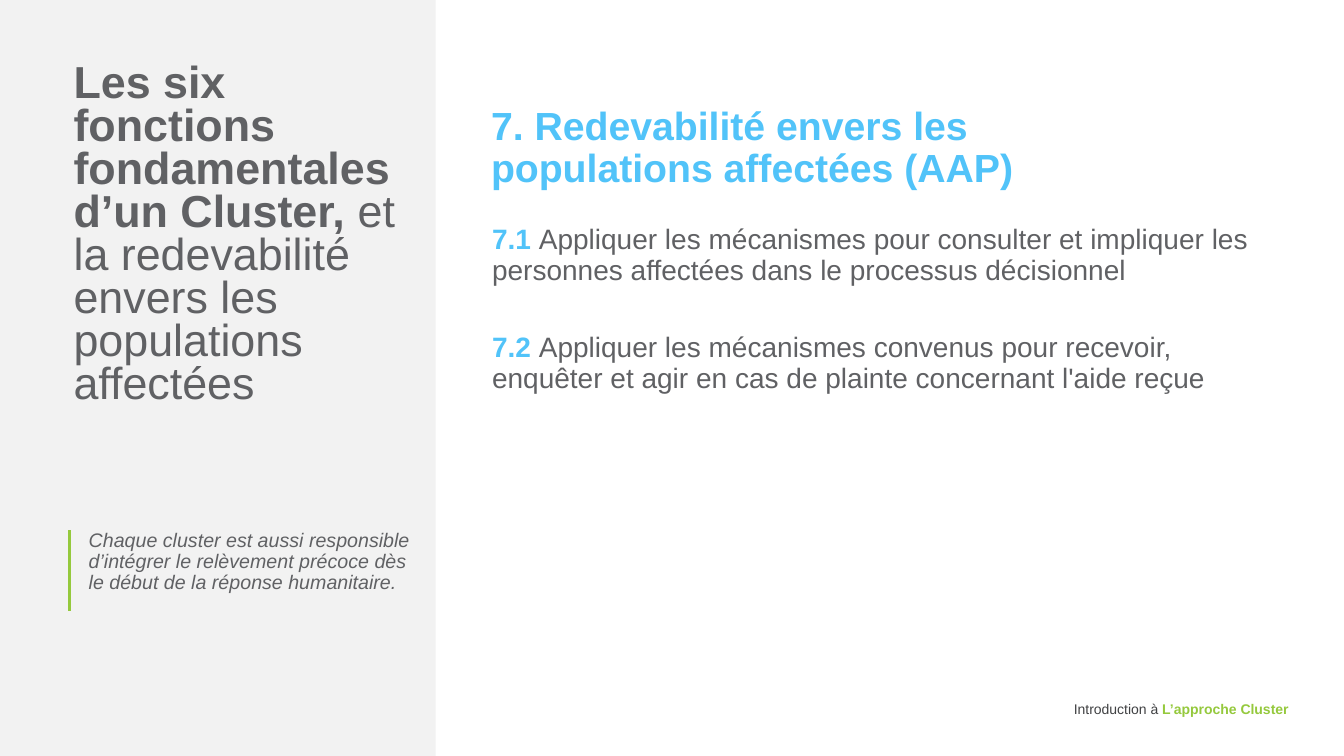
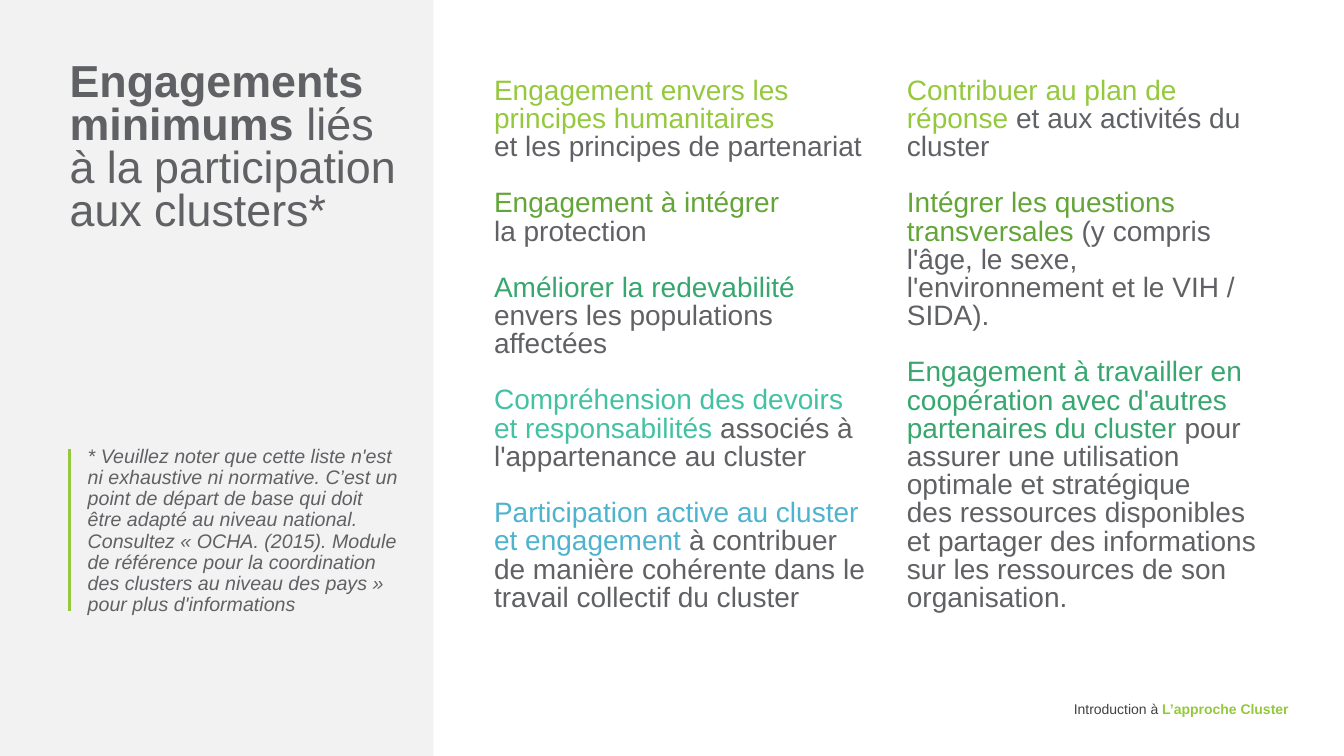
"""Build two slides on cluster functions and participation commitments."""
import pptx
import pptx.dml.color
import pptx.enum.shapes
import pptx.enum.text
import pptx.util
from lxml import etree

WIDTH, HEIGHT = 13.33, 7.5
FONT = "Arial"
PANEL, GREY, INK = "F2F2F2", "606164", "404143"
LIME, GREEN, JADE, TEAL, BLUE, SKY = "95C93D", "63A537", "37A76F", "44C1A3", "4EB3CF", "51C3F9"
BOLD, ITALIC = "bold", "italic"
RULE_X, RULE_BASE = 0.69, 6.06
COLUMNS_LEFT, COLUMNS_TOP, COLUMNS_WIDTH, COLUMNS_HEIGHT = 4.9, 0.72, 7.9, 5.65
COLUMN_GAP, RIGHT_INSET = 0.39, 0.1

# Text is a list of groups; a group is a list of paragraphs; a paragraph is a list of runs.
FOOTER = [[[("Introduction à ", INK), ("L’approche Cluster", LIME, BOLD)]]]

FUNCTIONS = {
    "panel": 4.32,
    "title_at": (0.73, 0.59, 3.37, 3.65),
    "title": [[[("Les six fonctions fondamentales d’un Cluster,", GREY, BOLD),
                (" et la redevabilité envers les populations affectées", GREY)]]],
    "note_at": (0.88, 5.21, 3.37, 1.04),
    "note": "Chaque cluster est aussi responsible d’intégrer le relèvement précoce "
            "dès le début de la réponse humanitaire.",
    "note_anchor": "TOP",
    "rule_top": 5.26,
}
HEADING = [[[("7. Redevabilité envers les", SKY, BOLD)],
            [("populations affectées (AAP)", SKY, BOLD)]]]
MECHANISMS = [
    [[("7.1 ", SKY, BOLD),
      ("Appliquer les mécanismes pour consulter et impliquer les personnes affectées "
       "dans le processus décisionnel", GREY)]],
    [[("7.2 ", SKY, BOLD),
      ("Appliquer les mécanismes convenus pour recevoir, enquêter et agir en cas de plainte "
       "concernant l'aide reçue", GREY)]],
]

COMMITMENTS = {
    "panel": 4.3,
    "title_at": (0.69, 0.58, 3.61, 2.5),
    "title": [[[("Engagements minimums ", GREY, BOLD), ("liés", GREY)],
               [("à la participation aux clusters*", GREY)]]],
    "note_at": (0.87, 4.45, 3.18, 1.71),
    "note": "* Veuillez noter que cette liste n'est ni exhaustive ni normative. C’est un point "
            "de départ de base qui doit être adapté au niveau national. Consultez « OCHA. (2015). "
            "Module de référence pour la coordination des clusters au niveau des pays » "
            "pour plus d'informations",
    "note_anchor": "BOTTOM",
    "rule_top": 4.45,
}
COMMITMENT_COLUMNS = [
    [
        [[("Engagement envers les principes humanitaires", LIME)],
         [("et les principes de partenariat", GREY)]],
        [[("Engagement à intégrer", GREEN)], [("la protection", GREY)]],
        [[("Améliorer la redevabilité ", JADE), ("envers les populations affectées", GREY)]],
        [[("Compréhension des devoirs et responsabilités", TEAL),
          (" associés à l'appartenance au cluster", GREY)]],
        [[("Participation active au cluster et engagement", BLUE),
          (" à contribuer de manière cohérente dans le travail collectif du cluster", GREY)]],
    ],
    [
        [[("Contribuer au plan de réponse ", LIME), ("et aux activités du cluster", GREY)]],
        [[("Intégrer les questions transversales ", GREEN),
          ("(y compris l'âge, le sexe, l'environnement et le VIH / SIDA).", GREY)]],
        [[("Engagement à travailler en coopération avec d'autres partenaires du cluster ", JADE),
          ("pour assurer une utilisation optimale et stratégique", GREY)],
         [("des ressources disponibles", GREY)],
         [("et partager des informations", GREY)],
         [("sur les ressources de son organisation.", GREY)]],
    ],
]


def color(value):
    return pptx.dml.color.RGBColor.from_string(value)


def inches(*lengths):
    return [pptx.util.Inches(length) for length in lengths]


def add_text(slide, at, groups, size, spacing, gap=0, anchor="TOP", align="LEFT",
             insets=(0, 0.05, RIGHT_INSET, 0.05)):
    frame = slide.shapes.add_textbox(*inches(*at)).text_frame
    frame.word_wrap = True
    frame.vertical_anchor = pptx.enum.text.MSO_ANCHOR[anchor]
    (frame.margin_left, frame.margin_top,
     frame.margin_right, frame.margin_bottom) = inches(*insets)
    paragraph = None
    for group in groups:
        for position, runs in enumerate(group):
            first = paragraph is None
            paragraph = frame.paragraphs[0] if first else frame.add_paragraph()
            paragraph.alignment = pptx.enum.text.PP_ALIGN[align]
            paragraph.line_spacing = spacing
            if gap and position == 0 and not first:
                paragraph.space_before = pptx.util.Pt(gap)
            for words, ink, *styles in runs:
                run = paragraph.add_run()
                run.text = words
                run.font.name = FONT
                run.font.size = pptx.util.Pt(size)
                run.font.color.rgb = color(ink)
                run.font.bold = BOLD in styles
                run.font.italic = ITALIC in styles


def add_side_panel(slide, side):
    panel = slide.shapes.add_shape(pptx.enum.shapes.MSO_SHAPE.RECTANGLE,
                                   *inches(0, 0, side["panel"], HEIGHT))
    panel.shadow.inherit = False
    panel.fill.solid()
    panel.fill.fore_color.rgb = color(PANEL)
    panel.line.fill.background()
    add_text(slide, side["title_at"], side["title"], 32, 0.8)
    add_text(slide, side["note_at"], [[[(side["note"], GREY, ITALIC)]]], 14, 0.9,
             anchor=side["note_anchor"])
    rule = slide.shapes.add_connector(pptx.enum.shapes.MSO_CONNECTOR.STRAIGHT,
                                      *inches(RULE_X, RULE_BASE, RULE_X, side["rule_top"]))
    rule.line.color.rgb = color(LIME)
    rule.line.width = pptx.util.Pt(1.5)
    etree.SubElement(rule.element.spPr, pptx.oxml.ns.qn("a:effectLst"))


def add_slide(deck, side):
    slide = deck.slides.add_slide(deck.slide_layouts[6])
    add_side_panel(slide, side)
    add_text(slide, (8.51, 6.91, 4.27, 0.27), FOOTER, 10, 0.8, align="RIGHT",
             insets=(0.1, 0.1, 0, 0.1))
    return slide


def main():
    deck = pptx.Presentation()
    deck.slide_width, deck.slide_height = inches(WIDTH, HEIGHT)

    functions = add_slide(deck, FUNCTIONS)
    add_text(functions, (4.87, 1.01, 7.42, 0.96), HEADING, 28, 0.9)
    add_text(functions, (4.88, 2.19, 7.72, 2.24), MECHANISMS, 20, 0.9, gap=34)

    commitments = add_slide(deck, COMMITMENTS)
    column_width = (COLUMNS_WIDTH - RIGHT_INSET - COLUMN_GAP) / 2
    for index, column in enumerate(COMMITMENT_COLUMNS):
        left = COLUMNS_LEFT + index * (column_width + COLUMN_GAP)
        add_text(commitments, (left, COLUMNS_TOP, column_width + RIGHT_INSET, COLUMNS_HEIGHT),
                 column, 20, 0.84, gap=20)

    deck.save("out.pptx")


if __name__ == "__main__":
    main()
